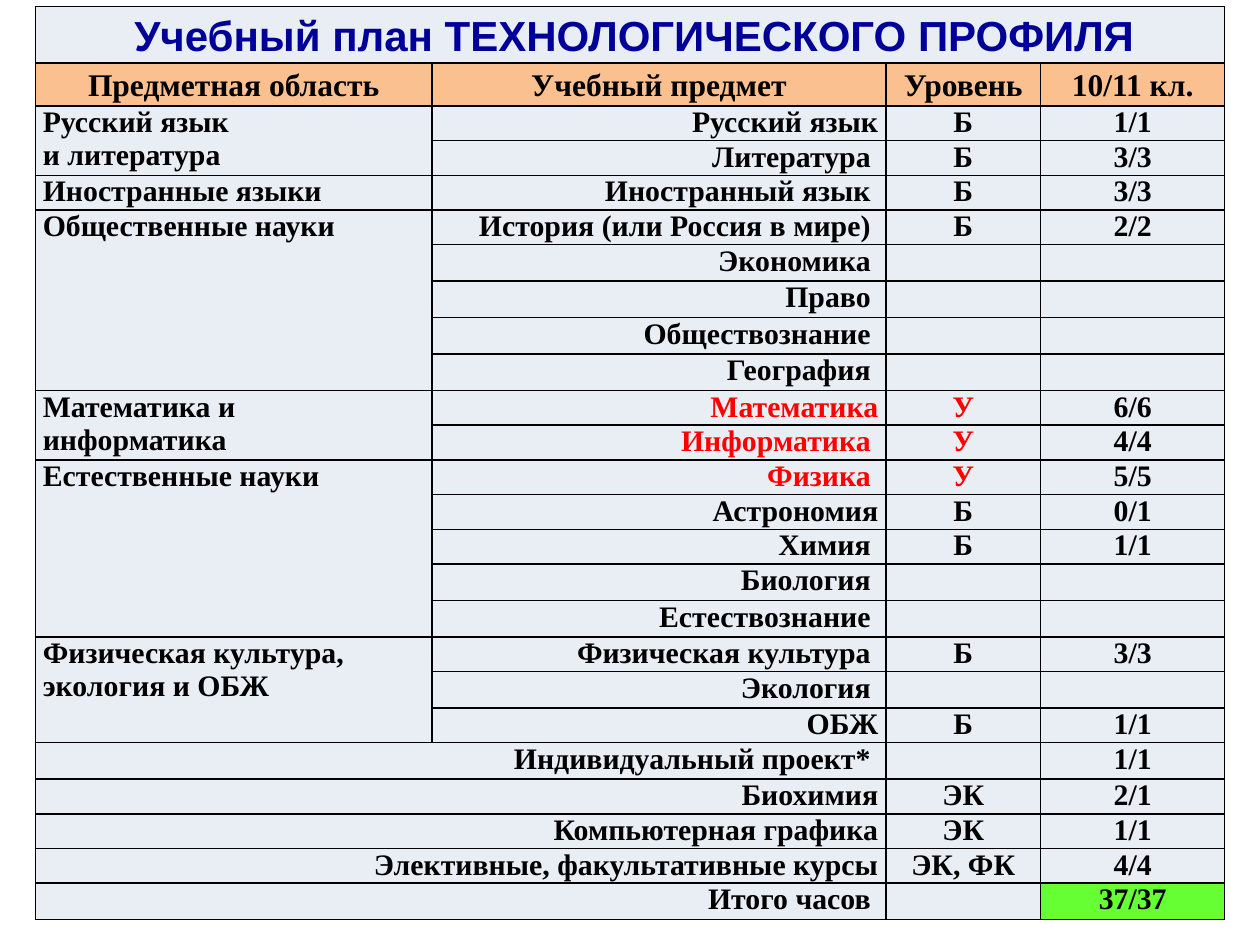
from dataclasses import dataclass

from lxml.etree import SubElement
from pptx import Presentation
from pptx.dml.color import RGBColor as Color
from pptx.enum.text import PP_ALIGN as Align
from pptx.oxml.ns import qn
from pptx.util import Inches, Pt


@dataclass(frozen=True)
class Theme:
    title_font: str = "Arial"
    body_font: str = "Times New Roman"
    title_size: int = 24
    header_size: int = 18
    body_size: int = 17
    title: str = "000099"
    text: str = "000000"
    accent: str = "FF0000"
    plain: str = "E9EDF4"
    header: str = "FAC090"
    total: str = "66FF33"
    border: str = "000000"
    border_width: int = 1


@dataclass(frozen=True)
class Span:
    text: str
    size: int = Theme.body_size
    color: str = Theme.text
    font: str = Theme.body_font


@dataclass(frozen=True)
class Subject:
    name: str
    level: str = ""
    hours: str = ""


@dataclass(frozen=True)
class Area:
    lines: list[str]
    subjects: list[Subject]


THEME = Theme()
COLUMNS = [3.15, 3.6, 1.23, 1.46]
TITLE_HEIGHT, HEADER_HEIGHT, BODY_HEIGHT = 0.45, 0.34, 6.34
HEADERS = ["Предметная область", "Учебный предмет", "Уровень", "10/11 кл."]
ADVANCED = "У"
AREAS = [
    Area(["Русский язык", "и литература"], [
        Subject("Русский язык", "Б", "1/1"),
        Subject("Литература ", "Б", "3/3"),
    ]),
    Area(["Иностранные языки"], [Subject("Иностранный язык ", "Б", "3/3")]),
    Area(["Общественные науки"], [
        Subject("История (или Россия в мире) ", "Б", "2/2"),
        Subject("Экономика "),
        Subject("Право "),
        Subject("Обществознание "),
        Subject("География "),
    ]),
    Area(["Математика и информатика"], [
        Subject("Математика", ADVANCED, "6/6"),
        Subject("Информатика ", ADVANCED, "4/4"),
    ]),
    Area(["Естественные науки"], [
        Subject("Физика ", ADVANCED, "5/5"),
        Subject("Астрономия", "Б", "0/1"),
        Subject("Химия ", "Б", "1/1"),
        Subject("Биология "),
        Subject("Естествознание "),
    ]),
    Area(["Физическая культура, экология и ОБЖ"], [
        Subject("Физическая культура ", "Б", "3/3"),
        Subject("Экология "),
        Subject("ОБЖ", "Б", "1/1"),
    ]),
]
EXTRAS = [
    Subject("Индивидуальный проект* ", "", "1/1"),
    Subject("Биохимия", "ЭК", "2/1"),
    Subject("Компьютерная графика", "ЭК", "1/1"),
    Subject("Элективные, факультативные курсы", "ЭК, ФК", "4/4"),
    Subject("Итого часов ", "", "37/37"),
]


def style_cell(cell, fill: str) -> None:
    cell.margin_left = cell.margin_right = Inches(0.06)
    cell.margin_top = cell.margin_bottom = 0
    properties = cell._tc.get_or_add_tcPr()
    for side in ("lnL", "lnR", "lnT", "lnB"):
        line = SubElement(properties, qn(f"a:{side}"), w=str(Pt(THEME.border_width)))
        solid = SubElement(line, qn("a:solidFill"))
        SubElement(solid, qn("a:srgbClr"), val=THEME.border)
    cell.fill.solid()
    cell.fill.fore_color.rgb = Color.from_string(fill)
    end = cell.text_frame.paragraphs[0]._p.get_or_add_endParaRPr()
    end.set("sz", str(THEME.body_size * 100))


def write_cell(cell, lines: list[list[Span]], align: Align, spacing: float = 1.0) -> None:
    frame = cell.text_frame
    for index, spans in enumerate(lines):
        para = frame.add_paragraph() if index else frame.paragraphs[0]
        para.alignment = align
        para.line_spacing = spacing
        for span in spans:
            run = para.add_run()
            run.text = span.text
            run.font.name = span.font
            run.font.size = Pt(span.size)
            run.font.bold = True
            run.font.color.rgb = Color.from_string(span.color)


def write_subject(table, row: int, column: int, subject: Subject) -> None:
    color = THEME.accent if subject.level == ADVANCED else THEME.text
    write_cell(table.cell(row, column), [[Span(subject.name, color=color)]], Align.RIGHT)
    if subject.level:
        write_cell(table.cell(row, 2), [[Span(subject.level, color=color)]], Align.CENTER)
    if subject.hours:
        write_cell(table.cell(row, 3), [[Span(subject.hours)]], Align.CENTER)


def add_plan(page) -> None:
    body_rows = sum(len(area.subjects) for area in AREAS) + len(EXTRAS)
    heights = [TITLE_HEIGHT, HEADER_HEIGHT] + [BODY_HEIGHT / body_rows] * body_rows
    table = page.shapes.add_table(
        len(heights), len(COLUMNS), Inches(0.28), Inches(0.05),
        Inches(sum(COLUMNS)), Inches(sum(heights)),
    ).table
    for column, width in zip(table.columns, COLUMNS):
        column.width = Inches(width)
    for index, (row, height) in enumerate(zip(table.rows, heights)):
        row.height = Inches(height)
        for cell in row.cells:
            style_cell(cell, THEME.header if index == 1 else THEME.plain)

    title = table.cell(0, 0)
    title.merge(table.cell(0, 3))
    write_cell(title, [[
        Span(" ", THEME.header_size, THEME.title, THEME.title_font),
        Span("Учебный план ТЕХНОЛОГИЧЕСКОГО ПРОФИЛЯ",
             THEME.title_size, THEME.title, THEME.title_font),
    ]], Align.CENTER, 1.15)
    for column, text in enumerate(HEADERS):
        write_cell(table.cell(1, column), [[Span(text, THEME.header_size)]],
                   Align.CENTER, 1.15)

    row = 2
    for area in AREAS:
        heading = table.cell(row, 0)
        if len(area.subjects) > 1:
            heading.merge(table.cell(row + len(area.subjects) - 1, 0))
        write_cell(heading, [[Span(line)] for line in area.lines], Align.LEFT)
        for subject in area.subjects:
            write_subject(table, row, 1, subject)
            row += 1
    for subject in EXTRAS:
        table.cell(row, 0).merge(table.cell(row, 1))
        write_subject(table, row, 0, subject)
        row += 1
    table.cell(row - 1, 3).fill.fore_color.rgb = Color.from_string(THEME.total)


def main() -> None:
    """Build the curriculum slide and save it."""
    deck = Presentation()
    deck.slide_width, deck.slide_height = Inches(10), Inches(7.5)
    page = deck.slides.add_slide(deck.slide_layouts[6])
    add_plan(page)
    deck.save("out.pptx")


if __name__ == "__main__":
    main()
